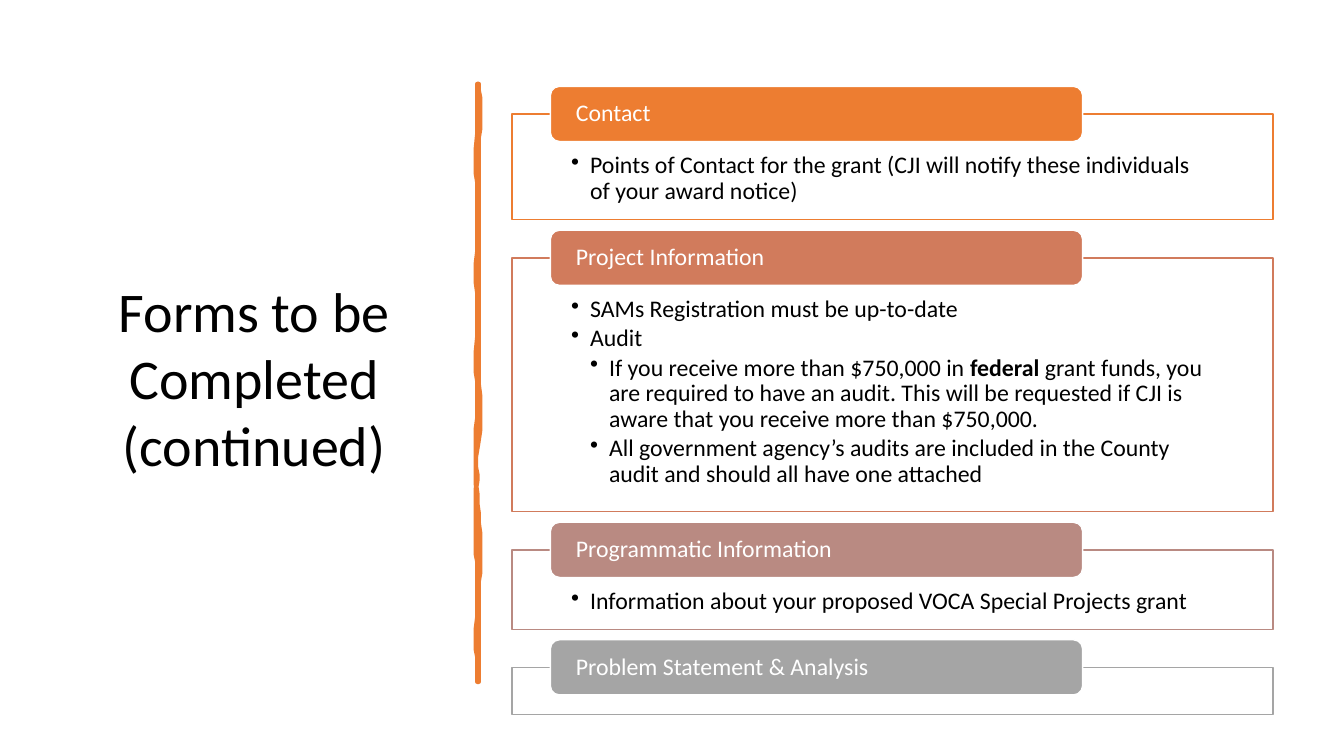
"""Build the slide that lists the forms to be completed for a grant."""
from dataclasses import dataclass
from typing import Any

from lxml import etree
from pptx import Presentation
from pptx.dml.color import RGBColor
from pptx.enum.shapes import MSO_SHAPE
from pptx.enum.text import MSO_ANCHOR, PP_ALIGN
from pptx.oxml.ns import qn
from pptx.util import Length, Pt

RECTANGLE = MSO_SHAPE.RECTANGLE
ROUNDED = MSO_SHAPE.ROUNDED_RECTANGLE
TOP, MIDDLE = MSO_ANCHOR.TOP, MSO_ANCHOR.MIDDLE
LEFT, CENTER = PP_ALIGN.LEFT, PP_ALIGN.CENTER


@dataclass(frozen=True)
class Theme:
    font: str = "Calibri"
    title_size: float = 40
    form_size: float = 17
    ink: str = "000000"
    paper: str = "FFFFFF"
    accent: str = "ED7D31"
    panel_opacity: int = 90


@dataclass(frozen=True)
class Box:
    left: float
    top: float
    width: float
    height: float

    def lengths(self) -> tuple[Length, ...]:
        return Pt(self.left), Pt(self.top), Pt(self.width), Pt(self.height)


@dataclass(frozen=True)
class Point:
    runs: tuple[str, ...]
    level: int = 1


@dataclass(frozen=True)
class Form:
    name: str
    color: str
    panel_height: float
    points: tuple[Point, ...] = ()


@dataclass(frozen=True)
class Bend:
    x1: float
    y1: float
    x2: float
    y2: float
    end_y: float


THEME = Theme()
SLIDE_WIDTH, SLIDE_HEIGHT = 960, 540
TITLE_BOX = Box(47.5, 193.7, 267.8, 152.6)
PANEL_LEFT, PANEL_WIDTH, FIRST_PANEL_TOP, PANEL_GAP = 365.8, 543.6, 81.4, 27.2
TAB_LEFT, TAB_WIDTH, TAB_HEIGHT = 393.1, 380.2, 39.4
HANGING_INDENT = 13.5
CURVE_STEPS = 8
BOLD_WORD = "federal"

FORMS = (
    Form("Contact", THEME.accent, 75.6, (
        Point(("Points of Contact for the grant (CJI will notify these individuals of your award notice)",)),
    )),
    Form("Project Information", "D17B5C", 181.4, (
        Point(("SAMs Registration must be up-to-date",)),
        Point(("Audit",)),
        Point(("If you receive more than $750,000 in ", BOLD_WORD,
               " grant funds, you are required to have an audit. This will be requested if CJI is"
               " aware that you receive more than $750,000."), 2),
        Point(("All government agency’s audits are included in the County audit"
               " and should all have one attached",), 2),
    )),
    Form("Programmatic Information", "B98A82", 56.7, (
        Point(("Information about your proposed VOCA Special Projects grant",)),
    )),
    Form("Problem Statement & Analysis", "A5A5A5", 33.8),
)

DIVIDER_TOP, RIGHT_X, LEFT_X = 60.5, 342, 340.6
RIGHT_EDGE = (
    Bend(343.4, 73.4, 343.4, 85.7, 105.1),
    Bend(340.6, 124.6, 342.7, 140.4, 162.7),
    Bend(341.3, 185, 342, 188.6, 211.7),
    Bend(341.3, 234, 343.4, 246.2, 256.3),
    Bend(340.6, 266.4, 344.9, 298.1, 313.9),
    Bend(339.1, 329, 339.8, 348.5, 367.2),
    Bend(343.4, 385.9, 343.4, 406.1, 420.5),
    Bend(340.6, 434.2, 342.7, 468, 486.7),
)
LEFT_EDGE = (
    Bend(341.3, 465.1, 339.1, 463.7, 441.4),
    Bend(341.3, 419.8, 341.3, 410.4, 401),
    Bend(339.8, 391.7, 339.8, 356.4, 343.4),
    Bend(340.6, 330.5, 339.1, 320.4, 298.8),
    Bend(341.3, 277.9, 339.8, 268.6, 241.2),
    Bend(341.3, 214.6, 339.8, 202.3, 180),
    Bend(341.3, 157, 342, 144, 130.3),
    Bend(338.4, 117.4, 343.4, 74.9, DIVIDER_TOP),
)

PANEL_FRAME = {
    "word_wrap": True, "vertical_anchor": TOP,
    "margin_left": Pt(42.2), "margin_right": Pt(42.2),
    "margin_top": Pt(28), "margin_bottom": Pt(9.4),
}
TAB_FRAME = {
    "word_wrap": True, "vertical_anchor": MIDDLE,
    "margin_left": Pt(16.3), "margin_right": Pt(16.3),
    "margin_top": Pt(0), "margin_bottom": Pt(0),
}
TITLE_FRAME = {"word_wrap": True, "vertical_anchor": TOP}
TITLE_PARAGRAPH = {"alignment": CENTER}
TAB_PARAGRAPH = {"alignment": LEFT, "line_spacing": 0.9}
POINT_PARAGRAPH = {"alignment": LEFT, "line_spacing": 0.9, "space_after": Pt(2.5)}


def apply_format(target: Any, values: dict[str, Any]) -> None:
    """Set every named attribute of the target."""
    for name, value in values.items():
        setattr(target, name, value)


def paint(shape: Any, fill: str, line: str, weight: float) -> None:
    """Give a shape a flat fill and an outline."""
    shape.shadow.inherit = False
    shape.fill.solid()
    shape.fill.fore_color.rgb = RGBColor.from_string(fill)
    shape.line.color.rgb = RGBColor.from_string(line)
    shape.line.width = Pt(weight)


def write(paragraph: Any, words: str, size: float, color: str, bold: bool = False) -> None:
    """Add one formatted run to a paragraph."""
    run = paragraph.add_run()
    run.text = words
    apply_format(run.font, {"name": THEME.font, "size": Pt(size), "bold": bold})
    run.font.color.rgb = RGBColor.from_string(color)


def add_title(slide: Any) -> None:
    """Place the slide title."""
    frame = slide.shapes.add_textbox(*TITLE_BOX.lengths()).text_frame
    apply_format(frame, TITLE_FRAME)
    apply_format(frame.paragraphs[0], TITLE_PARAGRAPH)
    write(frame.paragraphs[0], "Forms to be Completed (continued)", THEME.title_size, THEME.ink)


def trace_edge(x: float, start_y: float, bends: tuple[Bend, ...]) -> list[tuple[float, float]]:
    """Sample the cubic bends of one divider edge."""
    vertices = []
    for bend in bends:
        for step in range(1, CURVE_STEPS + 1):
            t = step / CURVE_STEPS
            weights = ((1 - t) ** 3, 3 * t * (1 - t) ** 2, 3 * t * t * (1 - t), t ** 3)
            xs = (x, bend.x1, bend.x2, x)
            ys = (start_y, bend.y1, bend.y2, bend.end_y)
            vertices.append((sum(w * v for w, v in zip(weights, xs)),
                             sum(w * v for w, v in zip(weights, ys))))
        start_y = bend.end_y
    return vertices


def add_divider(slide: Any) -> None:
    """Draw the hand-sketched vertical divider."""
    bottom = RIGHT_EDGE[-1].end_y
    outline = slide.shapes.build_freeform(RIGHT_X, DIVIDER_TOP, scale=float(Pt(1)))
    outline.add_line_segments(trace_edge(RIGHT_X, DIVIDER_TOP, RIGHT_EDGE), close=False)
    outline.add_line_segments([(LEFT_X, bottom), *trace_edge(LEFT_X, bottom, LEFT_EDGE)])
    divider = outline.convert_to_shape()
    paint(divider, THEME.accent, THEME.accent, 3.25)
    etree.SubElement(divider.line._get_or_add_ln(), qn("a:round"))


def add_point(paragraph: Any, point: Point) -> None:
    """Write one bulleted point with its hanging indent."""
    apply_format(paragraph, {**POINT_PARAGRAPH, "level": point.level})
    properties = paragraph._p.get_or_add_pPr()
    properties.set("marL", str(Pt(HANGING_INDENT * point.level)))
    properties.set("indent", str(-Pt(HANGING_INDENT)))
    etree.SubElement(properties, qn("a:buChar"), char="•")
    for words in point.runs:
        write(paragraph, words, THEME.form_size, THEME.ink, words == BOLD_WORD)


def add_form(slide: Any, form: Form, top: float) -> None:
    """Draw a form's panel of points and its name tab."""
    panel_box = Box(PANEL_LEFT, top, PANEL_WIDTH, form.panel_height)
    panel = slide.shapes.add_shape(RECTANGLE, *panel_box.lengths())
    paint(panel, THEME.paper, form.color, 1)
    panel_color = panel._element.spPr.find(qn("a:solidFill"))[0]
    etree.SubElement(panel_color, qn("a:alpha"), val=str(THEME.panel_opacity * 1000))
    apply_format(panel.text_frame, PANEL_FRAME)
    for index, point in enumerate(form.points):
        add_point(panel.text_frame.add_paragraph() if index else panel.text_frame.paragraphs[0], point)

    tab_box = Box(TAB_LEFT, top - TAB_HEIGHT / 2, TAB_WIDTH, TAB_HEIGHT)
    tab = slide.shapes.add_shape(ROUNDED, *tab_box.lengths())
    paint(tab, form.color, THEME.paper, 1)
    apply_format(tab.text_frame, TAB_FRAME)
    apply_format(tab.text_frame.paragraphs[0], TAB_PARAGRAPH)
    write(tab.text_frame.paragraphs[0], form.name, THEME.form_size, THEME.paper)


def main() -> None:
    """Compose and save the slide."""
    deck = Presentation()
    apply_format(deck, {"slide_width": Pt(SLIDE_WIDTH), "slide_height": Pt(SLIDE_HEIGHT)})
    slide = deck.slides.add_slide(deck.slide_layouts[6])
    add_divider(slide)
    top = FIRST_PANEL_TOP
    for form in FORMS:
        add_form(slide, form, top)
        top += form.panel_height + PANEL_GAP
    add_title(slide)
    deck.save("out.pptx")


if __name__ == "__main__":
    main()
